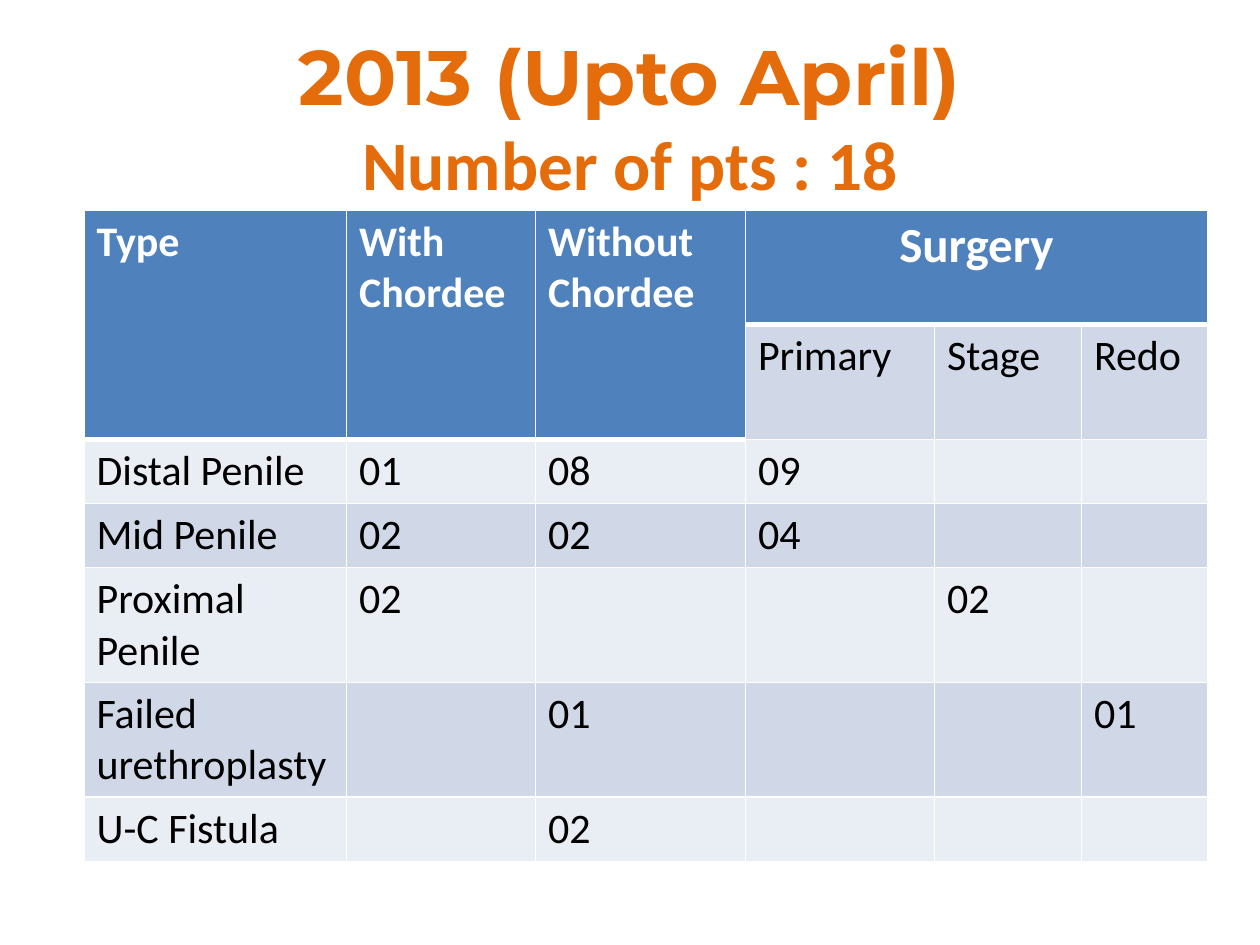
"""Build the slide tabulating 2013 patients by type, chordee and surgery."""
from dataclasses import dataclass

from lxml.etree import SubElement
from pptx import Presentation
from pptx.dml.color import RGBColor
from pptx.enum.text import MSO_ANCHOR, PP_ALIGN
from pptx.oxml.ns import qn
from pptx.util import Inches, Pt


@dataclass(frozen=True)
class Theme:
    orange: str = "E46C0A"
    header: str = "4F81BD"
    bands: tuple = ("E9EDF4", "D0D8E8")
    white: str = "FFFFFF"
    black: str = "000000"
    display: str = "Montserrat"
    body: str = "Calibri"
    year_size: float = 44.1
    count_size: float = 39.6
    surgery_size: int = 28
    cell_size: int = 24


def add_run(paragraph, wording, font, size, color, bold):
    run = paragraph.add_run()
    run.text = wording
    run.font.name = font
    run.font.size = Pt(size)
    run.font.bold = bold
    run.font.color.rgb = RGBColor.from_string(color)


def add_border(cell, side, width, color):
    line = SubElement(cell._tc.get_or_add_tcPr(), qn(f"a:{side}"), w=str(Pt(width)))
    SubElement(SubElement(line, qn("a:solidFill")), qn("a:srgbClr"), val=color)


theme = Theme()
presentation = Presentation()
presentation.slide_width = Inches(10)
presentation.slide_height = Inches(7.5)
slide = presentation.slides.add_slide(presentation.slide_layouts[6])
width, height = presentation.slide_width, presentation.slide_height

heading = slide.shapes.add_textbox(
    int(width * 0.05), int(height * 0.04), int(width * 0.9), int(height / 6)
).text_frame
heading.word_wrap = True
heading.vertical_anchor = MSO_ANCHOR.MIDDLE
title = heading.paragraphs[0]
title.alignment = PP_ALIGN.CENTER
add_run(title, "2013 (Upto April)", theme.display, theme.year_size, theme.orange, True)
title.add_line_break()
add_run(title, "Number of pts : 18", theme.body, theme.count_size, theme.orange, True)

records = [
    ["Type", "With Chordee", "Without Chordee", "Surgery", "", ""],
    ["", "", "", "Primary", "Stage", "Redo"],
    ["Distal Penile", "01", "08", "09", "", ""],
    ["Mid Penile", "02", "02", "04", "", ""],
    ["Proximal Penile", "02", "", "", "02", ""],
    ["Failed urethroplasty", "", "01", "", "", "01"],
    ["U-C Fistula", "", "02", "", "", ""],
]
unit = Inches(1) / 12
column_units = [25, 18, 20, 18, 14, 12]
row_heights = [0.91 if lines == 2 else 0.51 for lines in (2, 2, 1, 1, 2, 2, 1)]

patients = slide.shapes.add_table(
    len(records), len(column_units), int(8 * unit), int(20 * unit),
    int(sum(column_units) * unit), Inches(sum(row_heights)),
).table
for column, units in zip(patients.columns, column_units):
    column.width = int(units * unit)
for row, row_height in zip(patients.rows, row_heights):
    row.height = Inches(row_height)

header_depths = [2, 2, 2, 1, 1, 1]
for row_index, record in enumerate(records):
    for column_index, wording in enumerate(record):
        cell = patients.cell(row_index, column_index)
        depth = header_depths[column_index]
        in_header = row_index < depth
        add_border(cell, "lnL", 1, theme.white)
        add_border(cell, "lnR", 1, theme.white)
        add_border(cell, "lnT", 3 if row_index == depth else 1, theme.white)
        add_border(cell, "lnB", 3 if in_header else 1, theme.white)
        cell.fill.solid()
        cell.fill.fore_color.rgb = RGBColor.from_string(
            theme.header if in_header else theme.bands[row_index % 2]
        )
        if wording:
            paragraph = cell.text_frame.paragraphs[0]
            is_surgery = wording == "Surgery"
            paragraph.alignment = PP_ALIGN.CENTER if is_surgery else PP_ALIGN.LEFT
            add_run(
                paragraph, wording, theme.body,
                theme.surgery_size if is_surgery else theme.cell_size,
                theme.white if in_header else theme.black, in_header,
            )

for column_index in range(3):
    patients.cell(0, column_index).merge(patients.cell(1, column_index))
patients.cell(0, 3).merge(patients.cell(0, 5))

presentation.save("out.pptx")
